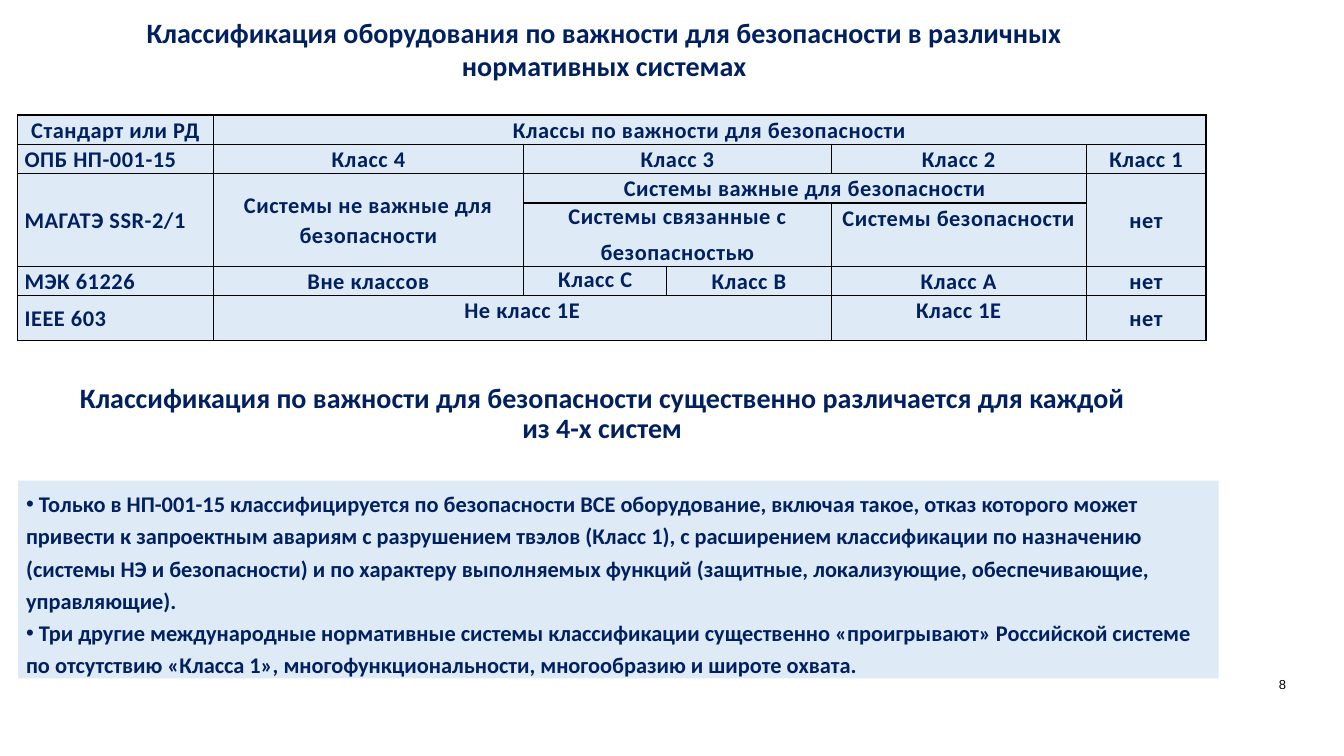
import pptx
import pptx.dml.color
import pptx.enum.text
import pptx.oxml
import pptx.oxml.ns
import pptx.util
from dataclasses import dataclass

Pt = pptx.util.Pt
ALIGN = pptx.enum.text.PP_ALIGN
ANCHOR = pptx.enum.text.MSO_ANCHOR


@dataclass(frozen=True)
class Theme:
    navy: str = "002060"
    pale: str = "DEEBF7"
    black: str = "000000"
    font: str = "Calibri"
    number_font: str = "Arial"
    heading: float = 20
    text: float = 16
    number: float = 9.3


THEME = Theme()

COLUMN_WIDTHS = [139.7, 221.8, 102.2, 117.4, 182.2, 85.6]
ROW_HEIGHTS = [21, 21, 21, 45, 21, 32]
# Each entry: row, column, rows spanned, columns spanned, lines
CELLS = [
    (0, 0, 1, 1, ["Стандарт или РД"]),
    (0, 1, 1, 5, ["Классы по важности для безопасности"]),
    (1, 0, 1, 1, ["ОПБ НП-001-15"]),
    (1, 1, 1, 1, ["Класс 4"]),
    (1, 2, 1, 2, ["Класс 3"]),
    (1, 4, 1, 1, ["Класс 2"]),
    (1, 5, 1, 1, ["Класс 1"]),
    (2, 0, 2, 1, ["МАГАТЭ SSR-2/1"]),
    (2, 1, 2, 1, ["Системы не важные для безопасности"]),
    (2, 2, 1, 3, ["Системы важные для безопасности"]),
    (2, 5, 2, 1, ["нет"]),
    (3, 2, 1, 2, ["Системы связанные с", "безопасностью"]),
    (3, 4, 1, 1, ["Системы безопасности"]),
    (4, 0, 1, 1, ["МЭК 61226"]),
    (4, 1, 1, 1, ["Вне классов"]),
    (4, 2, 1, 1, ["Класс С"]),
    (4, 3, 1, 1, ["Класс В"]),
    (4, 4, 1, 1, ["Класс А"]),
    (4, 5, 1, 1, ["нет"]),
    (5, 0, 1, 1, ["IEEE 603"]),
    (5, 1, 1, 3, ["Не класс 1E"]),
    (5, 4, 1, 1, ["Класс 1E"]),
    (5, 5, 1, 1, ["нет"]),
]


def color(value):
    return pptx.dml.color.RGBColor.from_string(value)


def write_text(frame, lines, *, size=THEME.text, font=THEME.font, fill=THEME.navy,
               bold=True, align=ALIGN.LEFT, spacing=1.0, gap=0, indent=0,
               bullet=None, tracking=0):
    frame.word_wrap = True
    for index, line in enumerate(lines):
        paragraph = frame.paragraphs[0] if index == 0 else frame.add_paragraph()
        paragraph.alignment = align
        paragraph.line_spacing = spacing
        paragraph.space_before = Pt(gap if index else 0)
        paragraph.space_after = Pt(0)
        properties = paragraph._p.get_or_add_pPr()
        properties.set("marL", str(Pt(indent)))
        properties.set("indent", "0")
        if bullet:
            mark = pptx.oxml.parse_xml(
                f'<a:buChar {pptx.oxml.ns.nsdecls("a")} char="{bullet}"/>')
            properties.append(mark)
        run = paragraph.add_run()
        run.text = line
        run.font.name = font
        run.font.size = Pt(size)
        run.font.bold = bold
        run.font.color.rgb = color(fill)
        if tracking:
            run._r.get_or_add_rPr().set("spc", str(round(tracking * 100)))


def place(shape, box, anchor=ANCHOR.TOP, top_inset=0):
    shape.left, shape.top, shape.width, shape.height = map(Pt, box)
    frame = shape.text_frame
    frame.auto_size = pptx.enum.text.MSO_AUTO_SIZE.NONE
    frame.vertical_anchor = anchor
    frame.margin_left = frame.margin_right = frame.margin_bottom = 0
    frame.margin_top = Pt(top_inset)
    return frame


def add_title(slide, box):
    frame = place(slide.shapes.title, box)
    write_text(frame, ["Классификация оборудования по важности для безопасности "
                       "в различных нормативных системах"],
               size=THEME.heading, align=ALIGN.CENTER, indent=14.4)


def format_cell(cell):
    properties = cell._tc.get_or_add_tcPr()
    for side in ("lnL", "lnR", "lnT", "lnB"):
        properties.append(pptx.oxml.parse_xml(
            f'<a:{side} {pptx.oxml.ns.nsdecls("a")} w="{Pt(1)}"><a:solidFill>'
            f'<a:srgbClr val="{THEME.black}"/></a:solidFill></a:{side}>'))
    cell.fill.solid()
    cell.fill.fore_color.rgb = color(THEME.pale)
    cell.margin_left = cell.margin_right = Pt(5)
    cell.margin_top = cell.margin_bottom = 0


def add_class_table(slide, left, top):
    table = slide.shapes.add_table(
        len(ROW_HEIGHTS), len(COLUMN_WIDTHS), Pt(left), Pt(top),
        Pt(sum(COLUMN_WIDTHS)), Pt(sum(ROW_HEIGHTS))).table
    for column, width in zip(table.columns, COLUMN_WIDTHS):
        column.width = Pt(width)
    for row, height in zip(table.rows, ROW_HEIGHTS):
        row.height = Pt(height)
    for cell in table.iter_cells():
        format_cell(cell)
    for row, column, row_span, column_span, lines in CELLS:
        cell = table.cell(row, column)
        if row_span * column_span > 1:
            cell.merge(table.cell(row + row_span - 1, column + column_span - 1))
        middle = row_span > 1 or (row >= 4 and column in (0, 5))
        cell.vertical_anchor = ANCHOR.MIDDLE if middle else ANCHOR.TOP
        left_aligned = column == 0 and row > 0
        write_text(cell.text_frame, lines, tracking=0.4, gap=6,
                   align=ALIGN.LEFT if left_aligned else ALIGN.CENTER,
                   spacing=1.0 if len(lines) > 1 or lines == ["Класс С"] else 1.07)


def add_conclusion(slide, box):
    frame = place(slide.shapes.add_textbox(0, 0, 0, 0), box)
    write_text(frame, ["Классификация по важности для безопасности существенно "
                       "различается для каждой из 4-х систем"],
               size=THEME.heading, align=ALIGN.CENTER, spacing=0.9)


def add_findings(slide, box):
    body = slide.placeholders[1]
    frame = place(body, box, top_inset=3)
    body.fill.solid()
    body.fill.fore_color.rgb = color(THEME.pale)
    write_text(frame, [
        " Только в НП-001-15 классифицируется по безопасности ВСЕ оборудование, "
        "включая такое, отказ которого может привести к запроектным авариям с "
        "разрушением твэлов (Класс 1), с расширением классификации по назначению "
        "(системы НЭ и безопасности) и по характеру выполняемых функций (защитные, "
        "локализующие, обеспечивающие, управляющие).",
        " Три другие международные нормативные системы классификации существенно "
        "«проигрывают» Российской системе по отсутствию «Класса 1», "
        "многофункциональности, многообразию и широте охвата.",
    ], spacing=1.2, indent=5.76, bullet="•")


def add_slide_number(slide, box):
    frame = place(slide.shapes.add_textbox(0, 0, 0, 0), box, ANCHOR.BOTTOM)
    write_text(frame, ["8"], size=THEME.number, font=THEME.number_font,
               fill=THEME.black, bold=False, align=ALIGN.RIGHT)


def main():
    presentation = pptx.Presentation()
    presentation.slide_width, presentation.slide_height = Pt(960), Pt(540)
    slide = presentation.slides.add_slide(presentation.slide_layouts[1])
    add_title(slide, (30.2, 10.8, 788.4, 49))
    add_class_table(slide, 12.6, 82.1)
    add_conclusion(slide, (56.2, 274.3, 748, 43.2))
    add_findings(slide, (12.9, 343.4, 857.5, 141.1))
    add_slide_number(slide, (859.7, 480.2, 59, 14.4))
    presentation.save("out.pptx")


if __name__ == "__main__":
    main()
